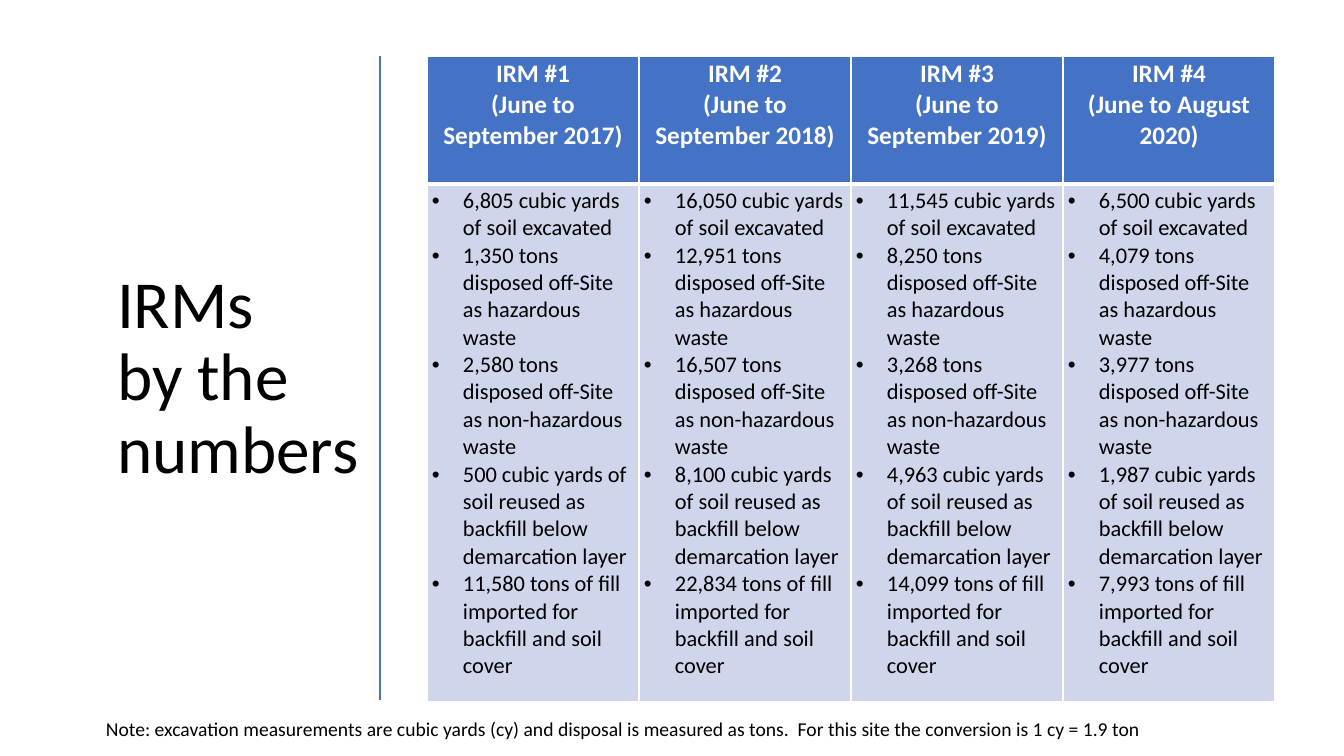
from lxml import etree
from pptx import Presentation
from pptx.dml.color import RGBColor
from pptx.enum.shapes import MSO_CONNECTOR
from pptx.enum.text import MSO_ANCHOR, MSO_AUTO_SIZE, PP_ALIGN
from pptx.oxml.ns import qn
from pptx.util import Emu, Pt

LEFT, CENTER = PP_ALIGN.LEFT, PP_ALIGN.CENTER
MIDDLE = MSO_ANCHOR.MIDDLE
STRAIGHT = MSO_CONNECTOR.STRAIGHT
FONT = "Calibri"
BLUE, PALE, WHITE, BLACK = "4472C4", "CFD5EA", "FFFFFF", "000000"

# Content
TITLE = "IRMs\vby the numbers"
NOTE = ("Note: excavation measurements are cubic yards (cy) and disposal is measured "
        "as tons.  For this site the conversion is 1 cy = 1.9 ton")
MEASURES = [
    "{} cubic yards of soil excavated",
    "{} tons disposed off-Site as hazardous waste",
    "{} tons disposed off-Site as non-hazardous waste",
    "{} cubic yards of soil reused as backfill below demarcation layer",
    "{} tons of fill imported for backfill and soil cover",
]
IRMS = [
    ("IRM #1", "(June to September 2017)", ["6,805", "1,350", "2,580", "500", "11,580"]),
    ("IRM #2", "(June to September 2018)", ["16,050", "12,951", "16,507", "8,100", "22,834"]),
    ("IRM #3", "(June to September 2019)", ["11,545", "8,250", "3,268", "4,963", "14,099"]),
    ("IRM #4", "(June to August 2020)", ["6,500", "4,079", "3,977", "1,987", "7,993"]),
]

# Layout in px
SLIDE_W, SLIDE_H = 1344, 756
TABLE_X, TABLE_Y, COL_W = 427, 56, 212
ROW_H = [128, 518]
INDENT = 31


def px(n):
    return Emu(round(n * 914400 / 100.8))


def rgb(value):
    return RGBColor.from_string(value)


def write(tf, lines, size, color=BLACK, bold=False, align=LEFT, bullet=False):
    for i, line in enumerate(lines):
        p = tf.paragraphs[0] if i == 0 else tf.add_paragraph()
        p.text = line
        p.alignment = align
        if bullet:
            pPr = p._p.get_or_add_pPr()
            pPr.set("marL", str(px(INDENT)))
            pPr.set("indent", str(-px(INDENT)))
            etree.SubElement(pPr, qn("a:buFont")).set("typeface", "Arial")
            etree.SubElement(pPr, qn("a:buChar")).set("char", "•")
        for r in p.runs:
            r.font.name, r.font.size, r.font.bold = FONT, Pt(size), bold
            r.font.color.rgb = rgb(color)


def format_cell(cell, fill, bottom):
    cell.margin_left = cell.margin_right = px(5)
    cell.margin_top = cell.margin_bottom = px(3)
    tcPr = cell._tc.get_or_add_tcPr()
    for side, width in zip("LRTB", (1, 1, 1, bottom)):
        ln = etree.SubElement(tcPr, qn("a:ln" + side), w=str(Pt(width)))
        solid = etree.SubElement(ln, qn("a:solidFill"))
        etree.SubElement(solid, qn("a:srgbClr"), val=WHITE)
    cell.fill.solid()
    cell.fill.fore_color.rgb = rgb(fill)


prs = Presentation()
prs.slide_width, prs.slide_height = px(SLIDE_W), px(SLIDE_H)
s = prs.slides.add_slide(prs.slide_layouts[5])

# Title
title = s.shapes.title
title.left, title.top, title.width, title.height = px(107), px(212), px(267), px(334)
tf = title.text_frame
tf.word_wrap, tf.auto_size, tf.vertical_anchor = True, MSO_AUTO_SIZE.NONE, MIDDLE
write(tf, [TITLE], 48)
tf.paragraphs[0].line_spacing = 0.9

# Table: one column per IRM
table = s.shapes.add_table(len(ROW_H), len(IRMS), px(TABLE_X), px(TABLE_Y),
                           px(COL_W * len(IRMS)), px(sum(ROW_H))).table
for row, height in zip(table.rows, ROW_H):
    row.height = px(height)
for col, (name, period, amounts) in enumerate(IRMS):
    table.columns[col].width = px(COL_W)
    head, body = table.cell(0, col), table.cell(1, col)
    format_cell(head, BLUE, bottom=3)
    write(head.text_frame, [name, period], 18, WHITE, bold=True, align=CENTER)
    format_cell(body, PALE, bottom=1)
    items = [m.format(a) for m, a in zip(MEASURES, amounts)]
    write(body.text_frame, items, 16, bullet=True)

# Divider
line = s.shapes.add_connector(STRAIGHT, px(380), px(TABLE_Y), px(380), px(700))
line.line.color.rgb = rgb(BLUE)
line.line.width = Pt(1.5)
etree.SubElement(line._element.spPr, qn("a:effectLst"))

# Note
tf = s.shapes.add_textbox(px(96), px(712), px(1196), px(34)).text_frame
tf.word_wrap = True
write(tf, [NOTE], 14)

prs.save("out.pptx")
